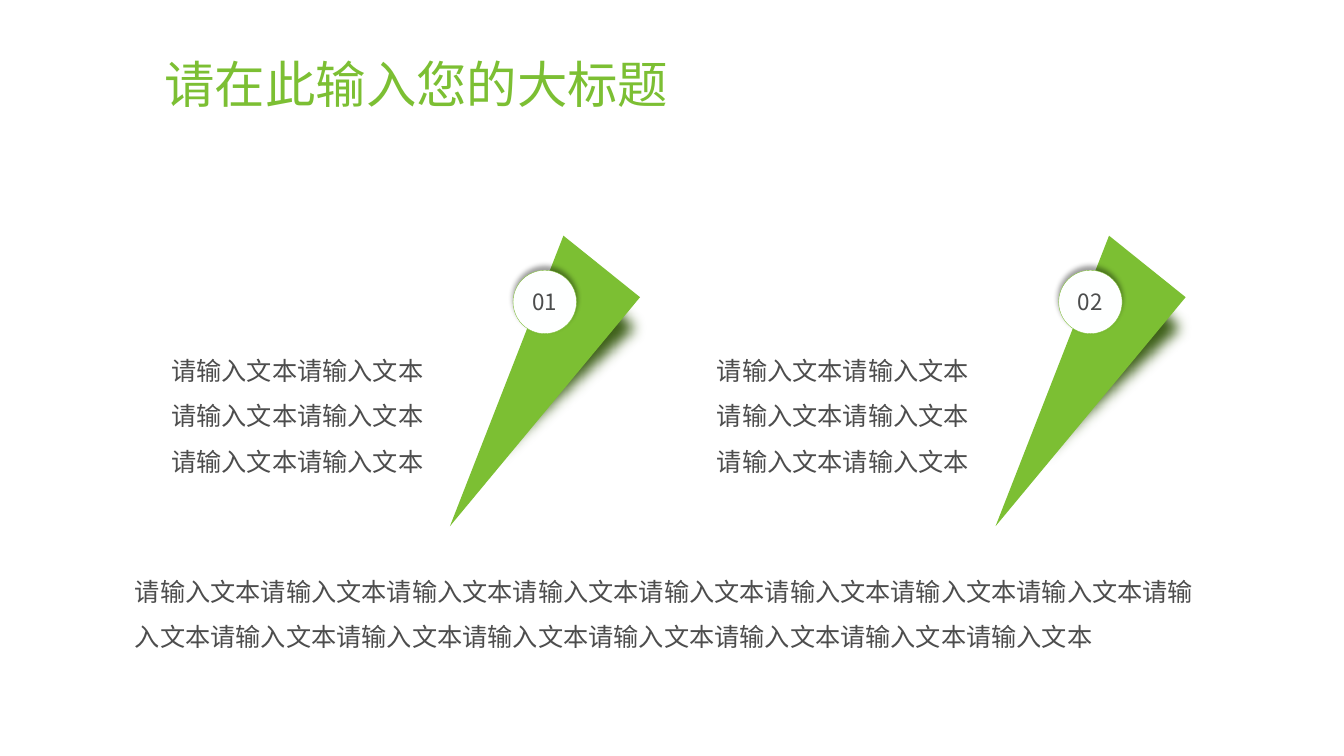
from lxml.etree import SubElement
from pptx import Presentation
from pptx.dml.color import RGBColor
from pptx.enum.shapes import MSO_SHAPE
from pptx.enum.text import MSO_ANCHOR, PP_ALIGN
from pptx.oxml import parse_xml
from pptx.oxml.ns import nsdecls, qn
from pptx.util import Cm, Pt

FONT = "Noto Sans CJK SC"
GREEN = RGBColor(0x7C, 0xBF, 0x33)
DARK = RGBColor(0x3E, 0x60, 0x19)
WHITE = RGBColor(0xFE, 0xFF, 0xFF)
GREY = RGBColor(0x4D, 0x4D, 0x4D)
INK = RGBColor(0x4C, 0x4D, 0x4D)

PHRASE = "请输入文本"
STEP = 13.75  # distance between the two blades, in cm
BLADE = [(14.2, 5.94), (16.13, 7.49), (11.34, 13.26)]
SHADE = [(16.66, 8.28), (11.05, 13.49), (14.55, 6.05)]

SOFT = '<a:softEdge rad="127000"/>'
GLOW = ('<a:outerShdw blurRad="50800" dist="38100" dir="16200000" '
        'rotWithShape="0"><a:srgbClr val="000000"><a:alpha val="40000"/>'
        '</a:srgbClr></a:outerShdw>')


def place(shape, left, top, width, height):
    shape.left, shape.top = Cm(left), Cm(top)
    shape.width, shape.height = Cm(width), Cm(height)


def write(shape, text, size, color, align=PP_ALIGN.LEFT, space=1.0):
    frame = shape.text_frame
    frame.text = text
    frame.word_wrap = True
    frame.vertical_anchor = MSO_ANCHOR.MIDDLE
    para = frame.paragraphs[0]
    para.alignment = align
    para.line_spacing = space
    font = para.runs[0].font
    font.size = Pt(size)
    font.name = FONT
    font.color.rgb = color
    # Chinese characters take the East Asian typeface
    SubElement(para.runs[0]._r.rPr, qn("a:ea"), typeface=FONT)


def add_effect(shape, effect):
    props = shape._element.spPr
    for old in props.findall(qn("a:effectLst")):
        props.remove(old)
    props.append(parse_xml(
        f'<a:effectLst {nsdecls("a")}>{effect}</a:effectLst>'))


def add_shard(slide, points, shift, color):
    spots = [(Cm(x + shift), Cm(y)) for x, y in points]
    build = slide.shapes.build_freeform(*spots[0])
    build.add_line_segments(spots[1:], close=True)
    shard = build.convert_to_shape()
    shard.shadow.inherit = False
    shard.fill.solid()
    shard.fill.fore_color.rgb = color
    shard.line.fill.background()
    return shard


def add_badge(slide, shift, label):
    badge = slide.shapes.add_shape(
        MSO_SHAPE.OVAL, Cm(12.93 + shift), Cm(6.81), Cm(1.6), Cm(1.6))
    badge.fill.solid()
    badge.fill.fore_color.rgb = WHITE
    badge.line.color.rgb = GREEN
    badge.line.width = Pt(0.25)
    add_effect(badge, GLOW)
    write(badge, label, 16, INK, PP_ALIGN.CENTER)
    frame = badge.text_frame
    frame.margin_left = frame.margin_right = 0


def add_text(slide, box, count, align=PP_ALIGN.LEFT):
    shape = slide.shapes.add_textbox(*map(Cm, box))
    write(shape, PHRASE * count, 18, GREY, align, 1.5)


def add_item(slide, index):
    shift = index * STEP
    add_effect(add_shard(slide, SHADE, shift, DARK), SOFT)
    add_shard(slide, BLADE, shift, GREEN)
    add_badge(slide, shift, f"{index + 1:02}")
    add_text(slide, (3.99 + shift, 8.41, 7.01, 3.76), 6, PP_ALIGN.CENTER)


def main():
    deck = Presentation()
    deck.slide_width, deck.slide_height = Cm(33.87), Cm(19.05)
    slide = deck.slides.add_slide(deck.slide_layouts[5])

    # Title
    title = slide.shapes.title
    place(title, 3.89, 1.02, 26.92, 2.36)
    write(title, "请在此输入您的大标题", 36, GREEN, space=0.9)

    # Two numbered blades with their text
    for index in range(2):
        add_item(slide, index)

    # Closing text
    add_text(slide, (3.15, 13.97, 27.56, 2.62), 16)

    deck.save("out.pptx")


if __name__ == "__main__":
    main()
